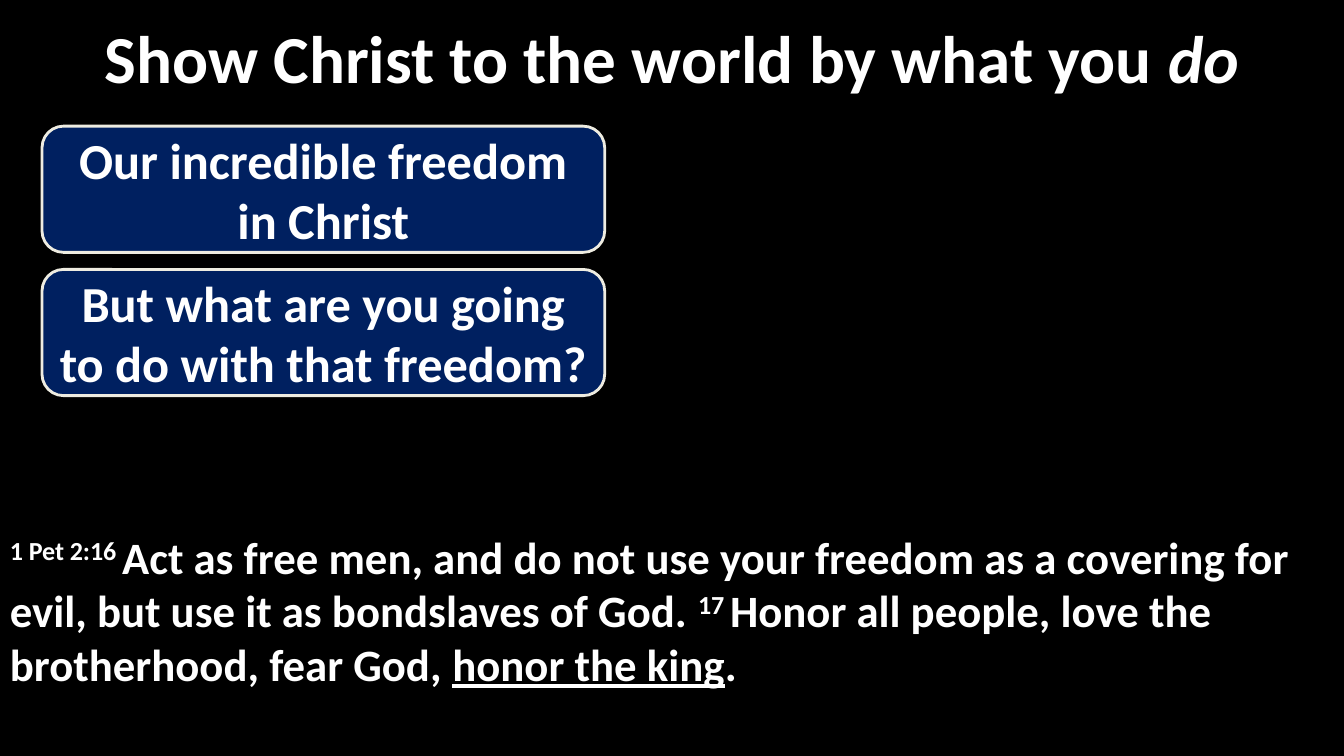
from dataclasses import dataclass

from pptx import Presentation
from pptx.dml.color import RGBColor
from pptx.enum.shapes import MSO_SHAPE
from pptx.enum.text import MSO_ANCHOR, PP_ALIGN
from pptx.util import Cm, Pt


@dataclass(frozen=True)
class Theme:
    font: str = "Calibri"
    black: RGBColor = RGBColor(0x00, 0x00, 0x00)
    white: RGBColor = RGBColor(0xFF, 0xFF, 0xFF)
    navy: RGBColor = RGBColor(0x00, 0x20, 0x60)
    cream: RGBColor = RGBColor(0xEE, 0xEC, 0xE1)
    title_size: int = 48
    point_size: int = 36
    verse_size: int = 32


THEME = Theme()
SUPERSCRIPT = "30000"

TITLE = [("Show Christ to the world by what you ", {}), ("do", {"italic": True})]
POINTS = [
    "Our incredible freedom in Christ",
    "But what are you going to do with that freedom?",
]
VERSE = [
    ("1 Pet 2:16 ", {"baseline": SUPERSCRIPT}),
    ("Act as free men, and do not use your freedom as a covering for evil, "
     "but use it as bondslaves of God. ", {}),
    ("17 ", {"baseline": SUPERSCRIPT}),
    ("Honor all people, love the brotherhood, fear God, ", {}),
    ("honor the king", {"underline": True}),
    (".", {}),
]


def set_attrs(target, values):
    for name, value in values.items():
        setattr(target, name, value)


def write_runs(sp, runs, size, align, anchor):
    """Fill a shape with one paragraph of (text, format) runs."""
    tf = sp.text_frame
    set_attrs(tf, {"word_wrap": True, "vertical_anchor": anchor})
    p = tf.paragraphs[0]
    p.alignment = align
    for text, extra in runs:
        r = p.add_run()
        r.text = text
        fmt = {"name": THEME.font, "size": Pt(size), "bold": True, **extra}
        baseline = fmt.pop("baseline", None)
        set_attrs(r.font, fmt)
        r.font.color.rgb = THEME.white
        if baseline:
            r._r.get_or_add_rPr().set("baseline", baseline)


def add_filled(s, kind, box, fill):
    sp = s.shapes.add_shape(kind, *map(Cm, box))
    sp.shadow.inherit = False
    sp.fill.solid()
    sp.fill.fore_color.rgb = fill
    return sp


def add_verse(s, box, runs):
    sp = add_filled(s, MSO_SHAPE.RECTANGLE, box, THEME.black)
    sp.line.fill.background()
    sp.text_frame.margin_top = Cm(1.5)
    write_runs(sp, runs, THEME.verse_size, PP_ALIGN.LEFT, MSO_ANCHOR.TOP)


def add_title(s, box, runs):
    sp = s.shapes.add_textbox(*map(Cm, box))
    write_runs(sp, runs, THEME.title_size, PP_ALIGN.CENTER, MSO_ANCHOR.MIDDLE)


def add_point(s, box, text):
    sp = add_filled(s, MSO_SHAPE.ROUNDED_RECTANGULAR_CALLOUT, box, THEME.navy)
    for i, value in enumerate((-0.22, 0.5, 0.17)):
        sp.adjustments[i] = value
    sp.line.color.rgb = THEME.cream
    sp.line.width = Pt(2)
    write_runs(sp, [(text, {})], THEME.point_size,
               PP_ALIGN.CENTER, MSO_ANCHOR.MIDDLE)


def main():
    prs = Presentation()
    set_attrs(prs, {"slide_width": Cm(33.87), "slide_height": Cm(19.05)})
    s = prs.slides.add_slide(prs.slide_layouts[6])
    s.background.fill.solid()
    s.background.fill.fore_color.rgb = THEME.black

    add_verse(s, (0, 11.84, 33.87, 7.21), VERSE)
    add_title(s, (1.48, 0.1, 30.9, 2.67), TITLE)
    top, pitch = 3.18, 3.61
    for i, text in enumerate(POINTS):
        add_point(s, (1.06, top + i * pitch, 14.18, 3.18), text)

    prs.save("out.pptx")


if __name__ == "__main__":
    main()
